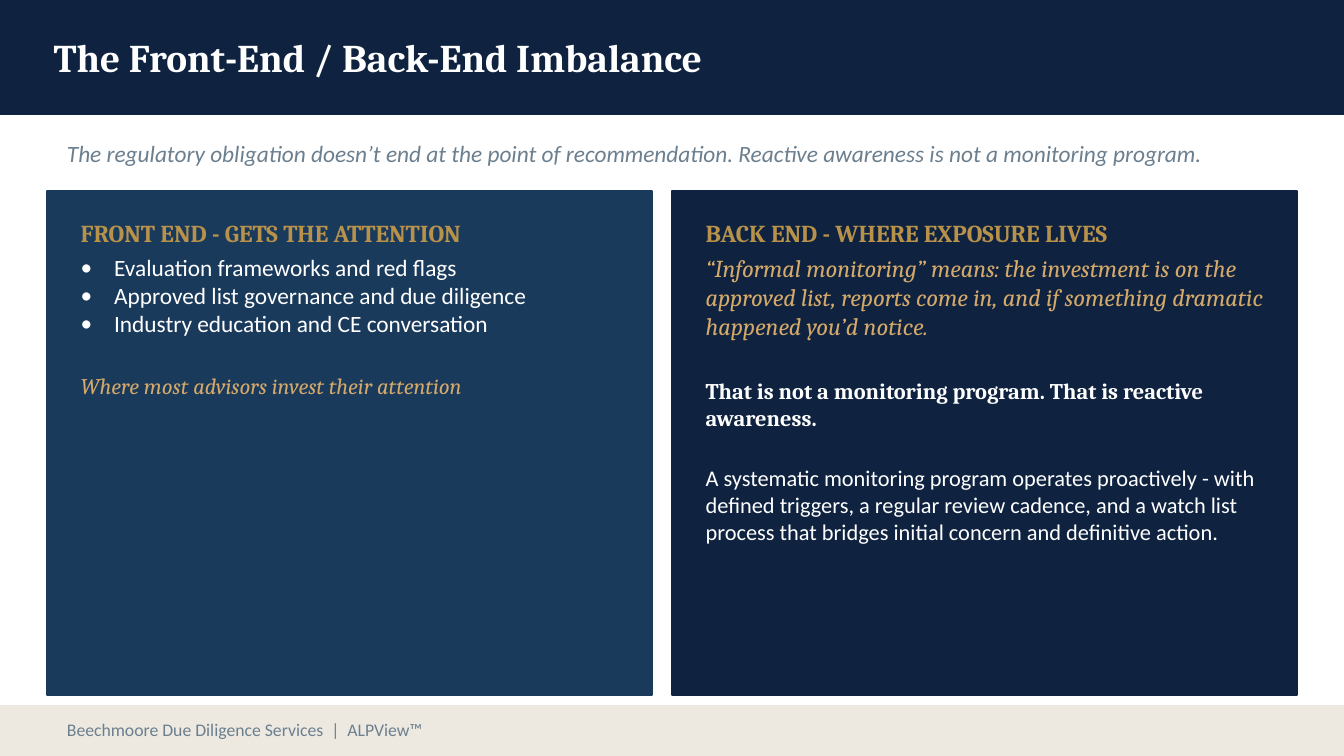
from lxml.etree import SubElement
from pptx import Presentation
from pptx.dml.color import RGBColor
from pptx.enum.shapes import MSO_SHAPE as Shape
from pptx.enum.text import MSO_ANCHOR as Anchor, PP_ALIGN as Align
from pptx.oxml.ns import qn
from pptx.util import Inches, Pt

SLIDE_WIDTH = 10
SLIDE_HEIGHT = SLIDE_WIDTH * 9 / 16

NAVY, BLUE, SAND = "0F2340", "1A3A5C", "EDE9E1"
WHITE, GRAY, GOLD, TAN = "FFFFFF", "6B7F8F", "B8924A", "D4A96A"

# Styles: font, size, colour, bold, italic
TITLE = ("Cambria", 21, WHITE, True, False)
FOOTER = ("Calibri", 9.5, GRAY, False, False)
SUBTITLE = ("Calibri", 12.5, GRAY, False, True)
HEADING = ("Cambria", 13, GOLD, True, False)
BULLET = ("Calibri", 12.5, WHITE, False, False)
REMARK = ("Cambria", 12, TAN, False, True)
QUOTE = ("Cambria", 13, TAN, False, True)
STRONG = ("Cambria", 12, WHITE, True, False)
BODY = ("Calibri", 12, WHITE, False, False)

# Bars: box (left, top, width, height), fill
BARS = [
    ((0, 0, SLIDE_WIDTH, 0.85), NAVY),
    ((0, 5.25, SLIDE_WIDTH, SLIDE_HEIGHT - 5.25), SAND),
]

# Labels: box, horizontal inset, vertical inset, style, text
LABELS = [
    ((0.4, 0, 9.2, 0.85), 0, 0, TITLE, "The Front-End / Back-End Imbalance"),
    ((0.4, 5.27, 9, 0.32), 0.1, 0.05, FOOTER,
     "Beechmoore Due Diligence Services  |  ALPView™"),
    ((0.4, 0.97, 9.2, 0.34), 0.1, 0.05, SUBTITLE,
     "The regulatory obligation doesn’t end at the point of recommendation. "
     "Reactive awareness is not a monitoring program."),
]

# Panels: left, width, fill, paragraphs (space before, style, text)
PANELS = [
    (0.35, 4.5, BLUE, [
        (0, HEADING, "FRONT END - GETS THE ATTENTION"),
        (3.5, BULLET, "Evaluation frameworks and red flags"),
        (0, BULLET, "Approved list governance and due diligence"),
        (0, BULLET, "Industry education and CE conversation"),
        (18.8, REMARK, "Where most advisors invest their attention"),
    ]),
    (5, 4.65, NAVY, [
        (0, HEADING, "BACK END - WHERE EXPOSURE LIVES"),
        (3.5, QUOTE,
         "“Informal monitoring” means: the investment is on the approved list, "
         "reports come in, and if something dramatic happened you’d notice."),
        (19.5, STRONG,
         "That is not a monitoring program. That is reactive awareness."),
        (18, BODY,
         "A systematic monitoring program operates proactively - with defined "
         "triggers, a regular review cadence, and a watch list process that "
         "bridges initial concern and definitive action."),
    ]),
]
PANEL_TOP, PANEL_HEIGHT = 1.42, 3.75


def color(value):
    return RGBColor.from_string(value)


def add_rectangle(slide, box, fill):
    shape = slide.shapes.add_shape(Shape.RECTANGLE, *map(Inches, box))
    shape.shadow.inherit = False
    shape.fill.solid()
    shape.fill.fore_color.rgb = color(fill)
    shape.line.color.rgb = color(fill)
    shape.line.width = Pt(1)
    return shape


def set_frame(frame, insets, anchor):
    """Set wrapping, anchor and insets (left, top, right, bottom)."""
    frame.word_wrap = True
    frame.vertical_anchor = anchor
    (frame.margin_left, frame.margin_top,
     frame.margin_right, frame.margin_bottom) = map(Inches, insets)


def add_bullet(paragraph):
    properties = paragraph._p.get_or_add_pPr()
    properties.set("marL", str(Inches(0.25)))
    properties.set("indent", str(-Inches(0.25)))
    SubElement(properties, qn("a:buSzPct")).set("val", "100000")
    SubElement(properties, qn("a:buFont")).set("typeface", "Calibri")
    SubElement(properties, qn("a:buChar")).set("char", "•")


def write(paragraph, text, style):
    paragraph.text = text
    paragraph.alignment = Align.LEFT
    font = paragraph.font
    font.name, size, font_color, font.bold, font.italic = style
    font.size = Pt(size)
    font.color.rgb = color(font_color)


def add_label(slide, box, inset_x, inset_y, style, text):
    frame = slide.shapes.add_textbox(*map(Inches, box)).text_frame
    set_frame(frame, (inset_x, inset_y, inset_x, inset_y), Anchor.MIDDLE)
    write(frame.paragraphs[0], text, style)


def add_panel(slide, left, width, fill, paragraphs):
    box = (left, PANEL_TOP, width, PANEL_HEIGHT)
    frame = add_rectangle(slide, box, fill).text_frame
    set_frame(frame, (0.25, 0.2, 0.2, 0.2), Anchor.TOP)
    for index, (space, style, text) in enumerate(paragraphs):
        paragraph = frame.add_paragraph() if index else frame.paragraphs[0]
        if space:
            paragraph.space_before = Pt(space)
        if style is BULLET:
            add_bullet(paragraph)
        write(paragraph, text, style)


def main():
    presentation = Presentation()
    presentation.slide_width = Inches(SLIDE_WIDTH)
    presentation.slide_height = Inches(SLIDE_HEIGHT)
    slide = presentation.slides.add_slide(presentation.slide_layouts[6])
    for box, fill in BARS:
        add_rectangle(slide, box, fill)
    for label in LABELS:
        add_label(slide, *label)
    for panel in PANELS:
        add_panel(slide, *panel)
    presentation.save("out.pptx")


if __name__ == "__main__":
    main()
